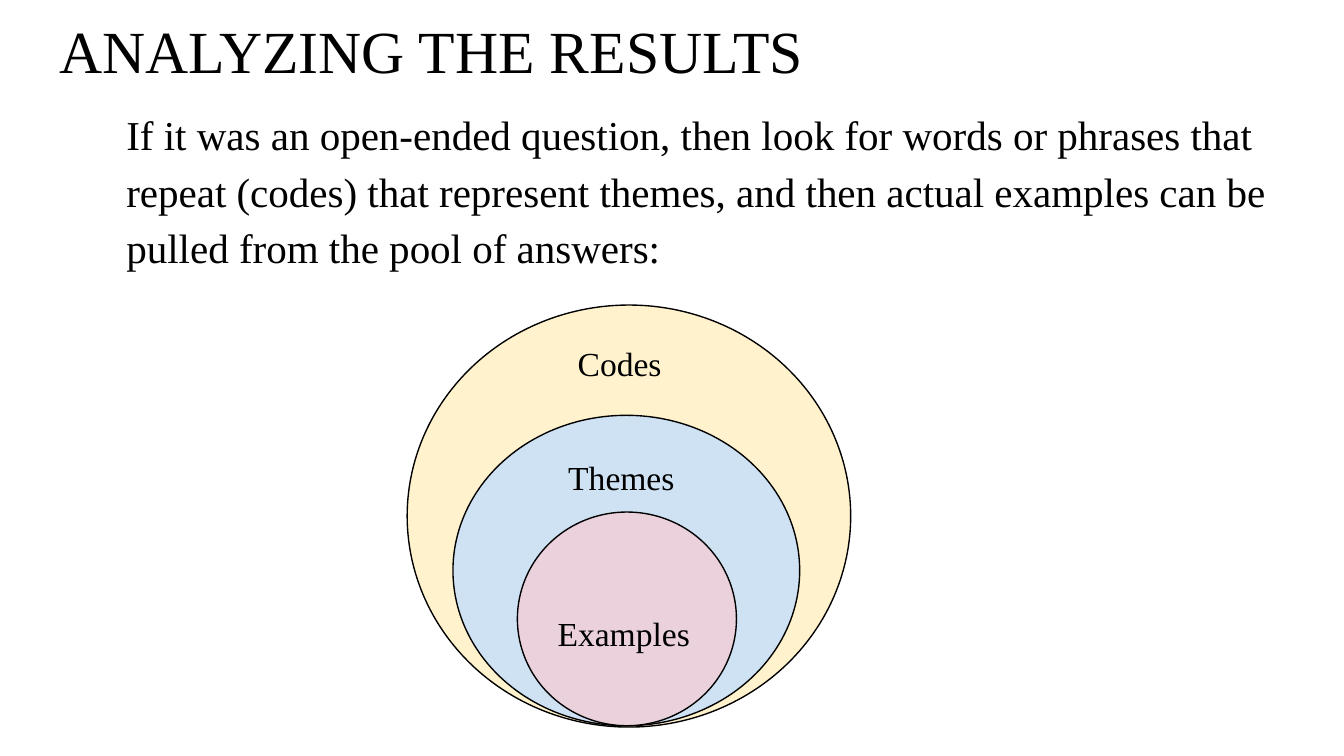
from pptx import Presentation
from pptx.dml.color import RGBColor
from pptx.enum.shapes import MSO_SHAPE
from pptx.enum.text import MSO_ANCHOR, MSO_AUTO_SIZE, PP_ALIGN
from pptx.util import Inches, Pt
from lxml import etree

OVAL = MSO_SHAPE.OVAL
TOP = MSO_ANCHOR.TOP
NO_AUTOFIT = MSO_AUTO_SIZE.NONE
LEFT = PP_ALIGN.LEFT

FONT = "Times New Roman"
COLORS = {
    "ink": "000000",
    "codes": "FFF2CC",
    "themes": "CFE2F3",
    "examples": "EAD1DC",
}
A_NS = "http://schemas.openxmlformats.org/drawingml/2006/main"

# Nested circles, outermost first: fill key, box
CIRCLES = [
    ("codes", (3.03, 2.27, 3.3, 3.14)),
    ("themes", (3.37, 3.09, 2.58, 2.31)),
    ("examples", (3.85, 3.81, 1.63, 1.59)),
]
LABELS = [
    ("Codes", (4.2, 2.45, 1.36, 0.55)),
    ("Themes", (4.13, 3.3, 1.36, 0.51)),
    ("Examples", (4.05, 4.46, 1.38, 0.48)),
]
INSTRUCTION = (
    "If it was an open-ended question, then look for words or phrases that "
    "repeat (codes) that represent themes, and then actual examples can be "
    "pulled from the pool of answers:"
)


def color(key):
    return RGBColor.from_string(COLORS[key])


def write_text(holder, text, size):
    """Fill a text holder with one left-aligned paragraph and return it."""
    frame = holder.text_frame
    frame.word_wrap = True
    frame.auto_size = NO_AUTOFIT
    frame.vertical_anchor = TOP
    frame.margin_left = frame.margin_right = Inches(0.1)
    frame.margin_top = frame.margin_bottom = Inches(0.1)
    frame.text = text
    paragraph = frame.paragraphs[0]
    paragraph.alignment = LEFT
    paragraph.line_spacing = 1.0
    paragraph.space_before = Pt(0)
    paragraph.font.name = FONT
    paragraph.font.size = Pt(size)
    paragraph.font.color.rgb = color("ink")
    return paragraph


def fill_placeholder(placeholder, box, text, size):
    placeholder.left, placeholder.top, placeholder.width, placeholder.height = map(Inches, box)
    return write_text(placeholder, text, size)


def indent_without_bullet(paragraph, indent):
    properties = paragraph._p.get_or_add_pPr()
    properties.set("marL", str(Inches(indent)))
    properties.set("indent", "0")
    etree.SubElement(properties, f"{{{A_NS}}}buNone")


def add_circle(slide, fill_key, box):
    circle = slide.shapes.add_shape(OVAL, *map(Inches, box))
    circle.shadow.inherit = False
    circle.fill.solid()
    circle.fill.fore_color.rgb = color(fill_key)
    circle.line.color.rgb = color("ink")
    circle.line.width = Pt(0.75)


def add_label(slide, text, box):
    label = slide.shapes.add_textbox(*map(Inches, box))
    write_text(label, text, 18)


def main():
    # Widescreen, 16:9
    presentation = Presentation()
    presentation.slide_width = Inches(10)
    presentation.slide_height = Inches(10 * 9 / 16)
    slide = presentation.slides.add_slide(presentation.slide_layouts[1])

    # Title and instruction
    title, body = slide.placeholders
    fill_placeholder(title, (0.34, 0, 9.32, 0.63), "ANALYZING THE RESULTS", 32)
    instruction = fill_placeholder(body, (0.34, 0.63, 9.32, 1.45), INSTRUCTION, 22)
    instruction.line_spacing = 1.15
    instruction.space_after = Pt(16)
    indent_without_bullet(instruction, 0.5)
    body.text_frame.margin_top = Inches(0.13)

    # Nested circles with their labels
    for fill_key, box in CIRCLES:
        add_circle(slide, fill_key, box)
    for text, box in LABELS:
        add_label(slide, text, box)

    presentation.save("out.pptx")


if __name__ == "__main__":
    main()
